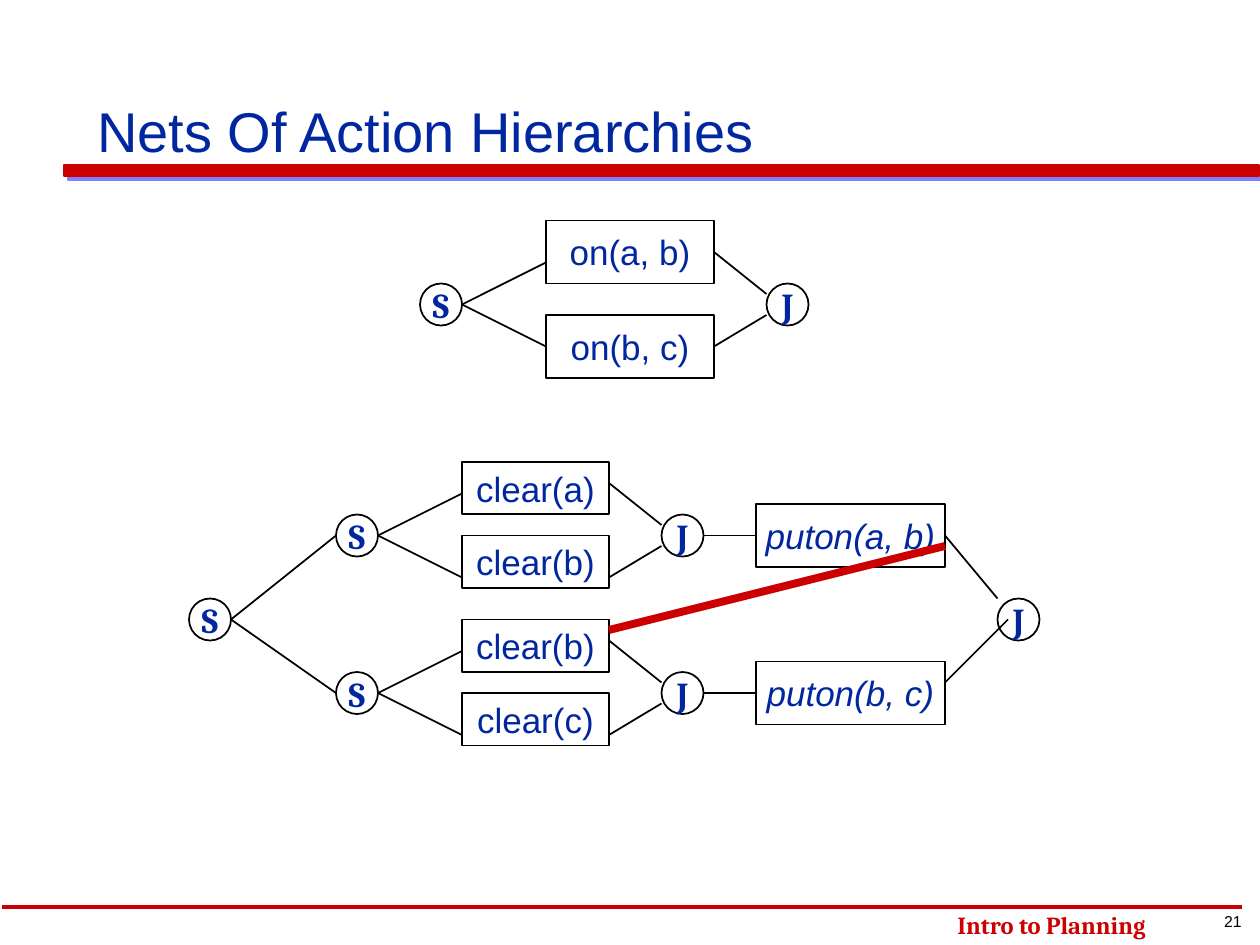
from pptx import Presentation
from pptx.dml.color import RGBColor
from pptx.enum.shapes import MSO_CONNECTOR, MSO_SHAPE
from pptx.enum.text import MSO_ANCHOR, MSO_AUTO_SIZE, PP_ALIGN
from pptx.oxml import parse_xml
from pptx.oxml.ns import nsdecls
from pptx.util import Inches, Pt

BLUE, RED, BLACK = "00279F", "CC0000", "000000"
colour = RGBColor.from_string

deck = Presentation()
deck.slide_width, deck.slide_height = Inches(10), Inches(7.5)
page = deck.slides.add_slide(deck.slide_layouts[5])
CELL = deck.slide_width / 120


def cells(*counts):
    return [round(count * CELL) for count in counts]


def write(box, text, size, font, ink, align, bold=False, italic=False):
    para = box.text_frame.paragraphs[0]
    para.alignment = align
    span = para.add_run()
    span.text = text
    span.font.size, span.font.name = Pt(size), font
    span.font.bold, span.font.italic = bold, italic
    span.font.color.rgb = colour(ink)


bar = page.shapes.add_shape(MSO_SHAPE.RECTANGLE, *cells(6.12, 15.72, 113.76, 1.08))
bar.fill.solid()
bar.fill.fore_color.rgb = bar.line.color.rgb = colour(RED)
bar.line.width = Pt(1)
bar.shadow.inherit = False
bar.element.spPr.find("{*}effectLst").append(parse_xml(
    f'<a:outerShdw {nsdecls("a")} dist="{Pt(2.8)}" dir="2700000" algn="ctr" '
    'rotWithShape="0"><a:srgbClr val="8080FF"/></a:outerShdw>'))

footers = [
    ("21", (115.32, 86.28, 4.2, 3), 9, "Arial", BLACK, PP_ALIGN.CENTER, False),
    ("Intro to Planning", (90, 86.04, 27.96, 3.96), 14, "Cambria", RED, PP_ALIGN.LEFT, True),
]
for text, place, size, font, ink, align, bold in footers:
    box = page.shapes.add_textbox(*cells(*place))
    box.text_frame.word_wrap = bold
    box.text_frame.auto_size = MSO_AUTO_SIZE.SHAPE_TO_FIT_TEXT
    write(box, text, size, font, ink, align, bold)

title = page.shapes.title
title.left, title.top, title.width, title.height = cells(8.04, 1.08, 101.76, 15.12)
title.text_frame.vertical_anchor = MSO_ANCHOR.BOTTOM
title.text_frame.auto_size = MSO_AUTO_SIZE.NONE
write(title, "Nets Of Action Hierarchies", 32, "Arial", BLUE, PP_ALIGN.LEFT)

boxes = [("puton(a, b)", 72, 48, 18, 6), ("puton(b, c)", 72, 63, 18, 6)]
circles = [("S", 18, 57), ("J", 95, 57)]
links = [(22, 59, 32, 51), (22, 59, 32, 66), (90, 51, 95, 57), (90, 65, 96, 59),
         (67, 51, 72, 51), (67, 66, 72, 66)]

nets = [
    (40, 27, 16, 6, "on(a, b)", "on(b, c)"),
    (32, 49, 14, 5, "clear(a)", "clear(b)"),
    (32, 64, 14, 5, "clear(b)", "clear(c)"),
]
for left, top, width, height, upper, lower in nets:
    start, end = left + 12, left + 12 + width
    boxes += [(upper, start, top - height, width, height),
              (lower, start, top + height - 3, width, height)]
    circles += [("S", left, top), ("J", end + 5, top)]
    links += [(left + 4, top + 2, start, top - 2), (left + 4, top + 2, start, top + 6),
              (end, top - 3, end + 5, top + 1), (end, top + 6, end + 5, top + 3)]

nodes = [(MSO_SHAPE.RECTANGLE, "Arial", *box) for box in boxes]
nodes += [(MSO_SHAPE.OVAL, "Cambria", *circle, 4, 4) for circle in circles]
for kind, font, text, *place in nodes:
    node = page.shapes.add_shape(kind, *cells(*place))
    node.shadow.inherit = False
    node.fill.background()
    node.line.color.rgb = colour(BLACK)
    node.line.width = Pt(1)
    node.text_frame.word_wrap = False
    node.text_frame.vertical_anchor = MSO_ANCHOR.MIDDLE
    write(node, text, 20, font, BLUE, PP_ALIGN.CENTER,
          bold=font == "Cambria", italic=text.startswith("puton"))

strokes = [(link, BLACK, 1) for link in links]
strokes += [((118.32, 86.4, 0.24, 86.4), RED, 2), ((90, 52, 58, 60), RED, 4.5)]
for ends, ink, weight in strokes:
    line = page.shapes.add_connector(MSO_CONNECTOR.STRAIGHT, *cells(*ends))
    line.line.color.rgb = colour(ink)
    line.line.width = Pt(weight)
    line.element.spPr.append(parse_xml(f'<a:effectLst {nsdecls("a")}/>'))

deck.save("out.pptx")
